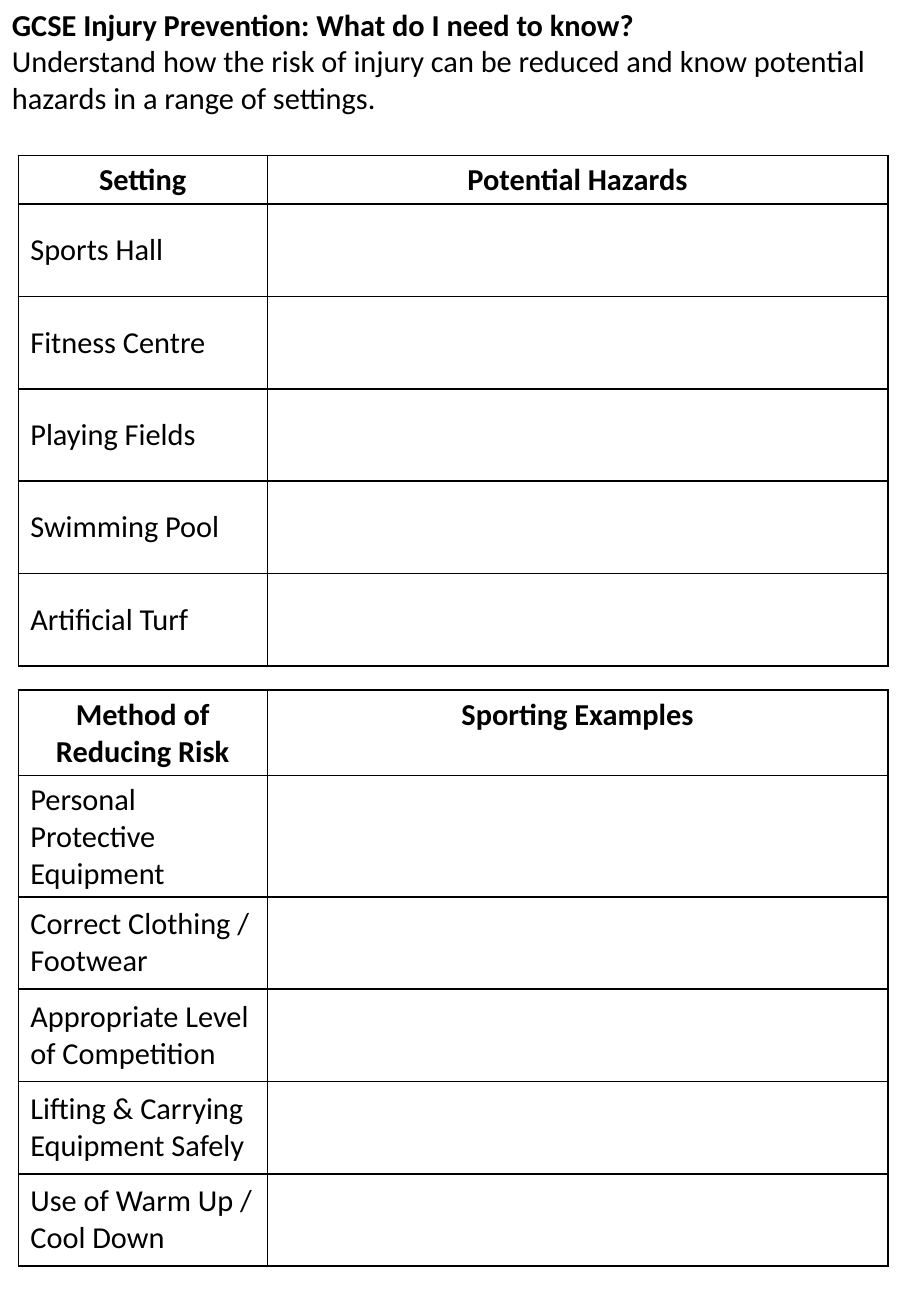
from lxml import etree
from pptx import Presentation
from pptx import util as u
from pptx.dml import color
from pptx.enum import text
from pptx.oxml import ns

FONT = "Calibri"
BLACK = "000000"
MARGIN = 15
COLUMNS = [205, 511]
HEADER_HEIGHT, ROW_HEIGHT = 40, 76
SETTINGS = ["Sports Hall", "Fitness Centre", "Playing Fields", "Swimming Pool", "Artificial Turf"]
METHODS = [
    "Personal Protective Equipment",
    "Correct Clothing / Footwear",
    "Appropriate Level of Competition",
    "Lifting & Carrying Equipment Safely",
    "Use of Warm Up / Cool Down",
]


def px(n):
    return u.Emu(n * 9144)


def rgb(hex_colour):
    return color.RGBColor.from_string(hex_colour)


def add_run(p, words, bold=False):
    r = p.add_run()
    r.text = words
    r.font.name = FONT
    r.font.size = u.Pt(18)
    r.font.bold = bold
    r.font.color.rgb = rgb(BLACK)


def add_borders(cell):
    tc_pr = cell._tc.get_or_add_tcPr()
    for side in ("lnL", "lnR", "lnT", "lnB"):
        line = etree.SubElement(tc_pr, ns.qn(f"a:{side}"), w=str(u.Pt(1)))
        fill = etree.SubElement(line, ns.qn("a:solidFill"))
        etree.SubElement(fill, ns.qn("a:srgbClr"), val=BLACK)


def add_heading(s, x, y, w, h):
    tf = s.shapes.add_textbox(px(x), px(y), px(w), px(h)).text_frame
    tf.word_wrap = True
    tf.auto_size = text.MSO_AUTO_SIZE.SHAPE_TO_FIT_TEXT
    add_run(tf.paragraphs[0], "GCSE Injury Prevention: What do I need to know?", True)
    add_run(
        tf.add_paragraph(),
        "Understand how the risk of injury can be reduced and know potential "
        "hazards in a range of settings.",
    )


def add_worksheet(s, x, y, headers, topics):
    heights = [HEADER_HEIGHT] + [ROW_HEIGHT] * len(topics)
    table = s.shapes.add_table(
        len(heights), len(COLUMNS), px(x), px(y), px(sum(COLUMNS)), px(sum(heights))
    ).table
    table.first_row = False
    table.horz_banding = False
    for column, width in zip(table.columns, COLUMNS):
        column.width = px(width)
    for row, height in zip(table.rows, heights):
        row.height = px(height)
    for cell in table.iter_cells():
        add_borders(cell)
        cell.fill.background()
    for i, header in enumerate(headers):
        p = table.cell(0, i).text_frame.paragraphs[0]
        p.alignment = text.PP_ALIGN.CENTER
        add_run(p, header, True)
    for i, topic in enumerate(topics, 1):
        cell = table.cell(i, 0)
        cell.vertical_anchor = text.MSO_ANCHOR.MIDDLE
        add_run(cell.text_frame.paragraphs[0], topic)


def main():
    prs = Presentation()
    prs.slide_width, prs.slide_height = px(750), px(1083)
    s = prs.slides.add_slide(prs.slide_layouts[6])
    add_heading(s, 0, 0, 750, 101)
    add_worksheet(s, MARGIN, 128, ["Setting", "Potential Hazards"], SETTINGS)
    add_worksheet(s, MARGIN, 568, ["Method of Reducing Risk", "Sporting Examples"], METHODS)
    prs.save("out.pptx")


if __name__ == "__main__":
    main()
